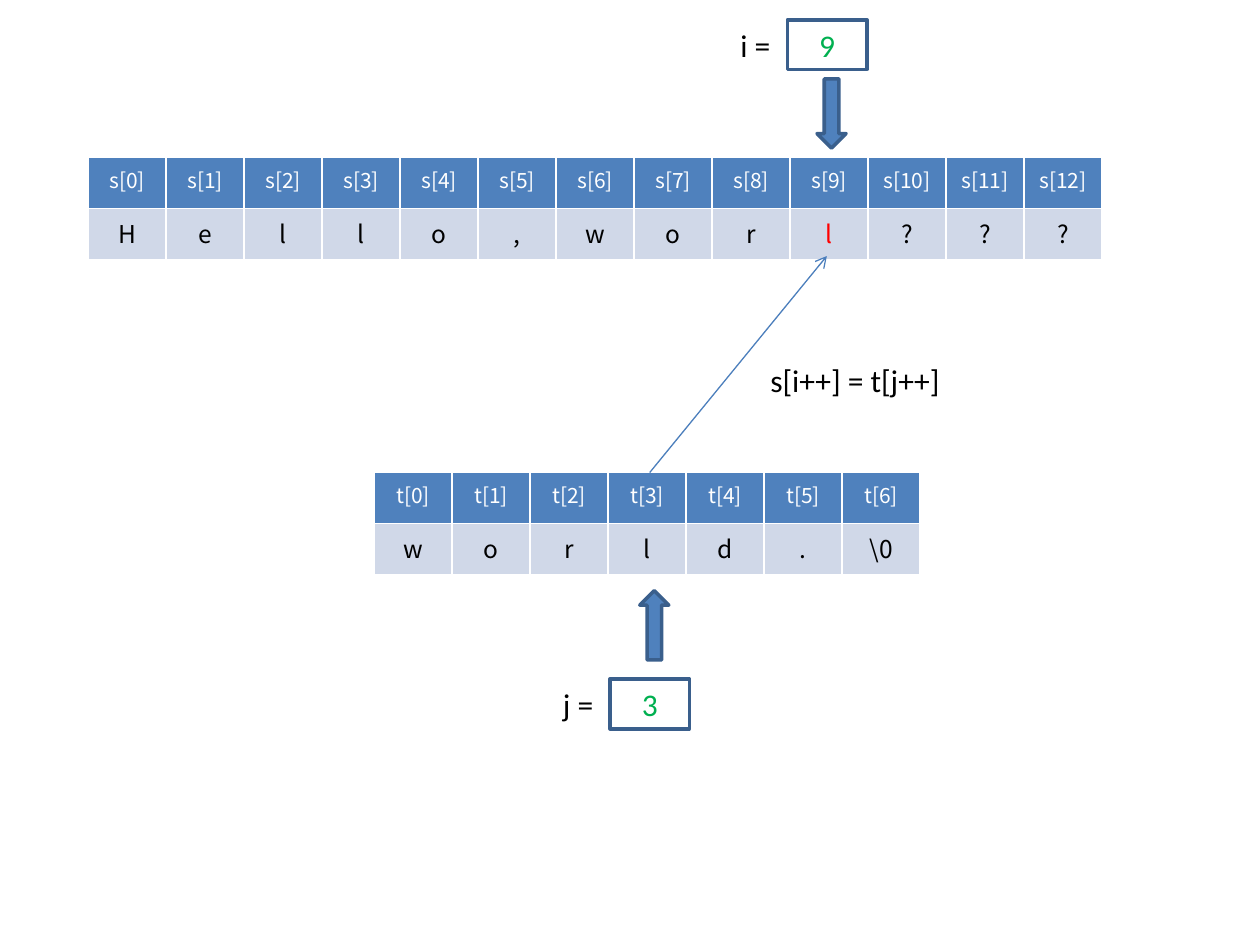
from lxml.etree import SubElement
from pptx import Presentation
from pptx.dml.color import RGBColor
from pptx.enum.shapes import MSO_CONNECTOR, MSO_SHAPE
from pptx.enum.text import MSO_ANCHOR, MSO_AUTO_SIZE, PP_ALIGN
from pptx.oxml.ns import qn
from pptx.util import Pt

BLUE, DARK_BLUE, PALE_BLUE = "4F81BD", "3A5F8C", "D0D8E8"
WHITE, BLACK, RED, GREEN = "FFFFFF", "000000", "FF0000", "00B050"
CELL_WIDTH, CELL_HEIGHT = 44.57, 29.2
BOX_SIZE = (45.4, 28.4)
ARROW_SIZE = (16.6, 39.6)
HEADER_FORMAT = {"name": "Noto Sans CJK JP", "size": Pt(12)}
LETTER_FORMAT = {"name": "Noto Sans CJK JP", "size": Pt(14)}
LABEL_FORMAT = {"name": "Calibri", "size": Pt(18)}


def color(hex_value):
    return RGBColor.from_string(hex_value)


def write(frame, text, text_format, text_color, alignment=PP_ALIGN.CENTER):
    para = frame.paragraphs[0]
    para.alignment = alignment
    span = para.add_run()
    span.text = text
    for name, value in text_format.items():
        setattr(span.font, name, value)
    span.font.color.rgb = color(text_color)


def add_cell_borders(cell):
    """Draw thin white borders; they must precede the fill in the XML."""
    properties = cell._tc.get_or_add_tcPr()
    for side in ("a:lnL", "a:lnR", "a:lnT", "a:lnB"):
        border = SubElement(properties, qn(side), w=str(Pt(1)))
        fill = SubElement(border, qn("a:solidFill"))
        SubElement(fill, qn("a:srgbClr"), val=WHITE)


def fill_cell(cell, text, text_format, text_color, background):
    add_cell_borders(cell)
    cell.fill.solid()
    cell.fill.fore_color.rgb = color(background)
    write(cell.text_frame, text, text_format, text_color)


def add_array(page, name, letters, left, top, changed=None):
    """Show an array as a row of indexes over a row of letters."""
    table = page.shapes.add_table(
        2, len(letters), Pt(left), Pt(top),
        Pt(CELL_WIDTH * len(letters)), Pt(CELL_HEIGHT * 2)).table
    for row in table.rows:
        row.height = Pt(CELL_HEIGHT)
    for index, letter in enumerate(letters):
        table.columns[index].width = Pt(CELL_WIDTH)
        letter_color = RED if index == changed else BLACK
        fill_cell(table.cell(0, index), f"{name}[{index}]",
                  HEADER_FORMAT, WHITE, BLUE)
        fill_cell(table.cell(1, index), letter,
                  LETTER_FORMAT, letter_color, PALE_BLUE)


def add_outlined_shape(page, kind, left, top, size, fill):
    shape = page.shapes.add_shape(kind, Pt(left), Pt(top), *map(Pt, size))
    shape.shadow.inherit = False
    shape.fill.solid()
    shape.fill.fore_color.rgb = color(fill)
    shape.line.color.rgb = color(DARK_BLUE)
    shape.line.width = Pt(2)
    return shape


def add_value_box(page, value, left, top):
    box = add_outlined_shape(page, MSO_SHAPE.RECTANGLE, left, top,
                             BOX_SIZE, WHITE)
    box.text_frame.vertical_anchor = MSO_ANCHOR.MIDDLE
    write(box.text_frame, value, LABEL_FORMAT, GREEN)


def add_block_arrow(page, left, top, rotation=0):
    arrow = add_outlined_shape(page, MSO_SHAPE.DOWN_ARROW, left, top,
                               ARROW_SIZE, BLUE)
    arrow.rotation = rotation


def add_label(page, text, left, top, width):
    box = page.shapes.add_textbox(Pt(left), Pt(top), Pt(width), Pt(29))
    box.text_frame.word_wrap = False
    box.text_frame.auto_size = MSO_AUTO_SIZE.SHAPE_TO_FIT_TEXT
    write(box.text_frame, text, LABEL_FORMAT, BLACK, PP_ALIGN.LEFT)


def add_copy_arrow(page, start, end):
    connector = page.shapes.add_connector(
        MSO_CONNECTOR.STRAIGHT, *map(Pt, start + end))
    connector.line.color.rgb = color("4B7EBC")
    connector.line.width = Pt(0.75)
    SubElement(connector.line._get_or_add_ln(), qn("a:tailEnd"), type="arrow")
    SubElement(connector._element.spPr, qn("a:effectLst"))


def main():
    deck = Presentation()
    deck.slide_width, deck.slide_height = Pt(720), Pt(540)
    page = deck.slides.add_slide(deck.slide_layouts[6])

    add_array(page, "s", "Hello,worl???", 50.4, 90, changed=9)
    add_array(page, "t", ["w", "o", "r", "l", "d", ".", "\\0"], 213.8, 270)

    add_label(page, "i =", 416, 11.3, 32)
    add_value_box(page, "9", 450, 11.3)
    add_block_arrow(page, 466.9, 45)

    add_label(page, "j =", 314.6, 388.1, 32.4)
    add_value_box(page, "3", 348.6, 388.1)
    add_block_arrow(page, 365.6, 337.5, rotation=180)

    add_label(page, "s[i++] = t[j++]", 433.1, 202.5, 112.3)
    add_copy_arrow(page, (371.3, 270), (472.5, 146.3))
    deck.save("out.pptx")


if __name__ == "__main__":
    main()
